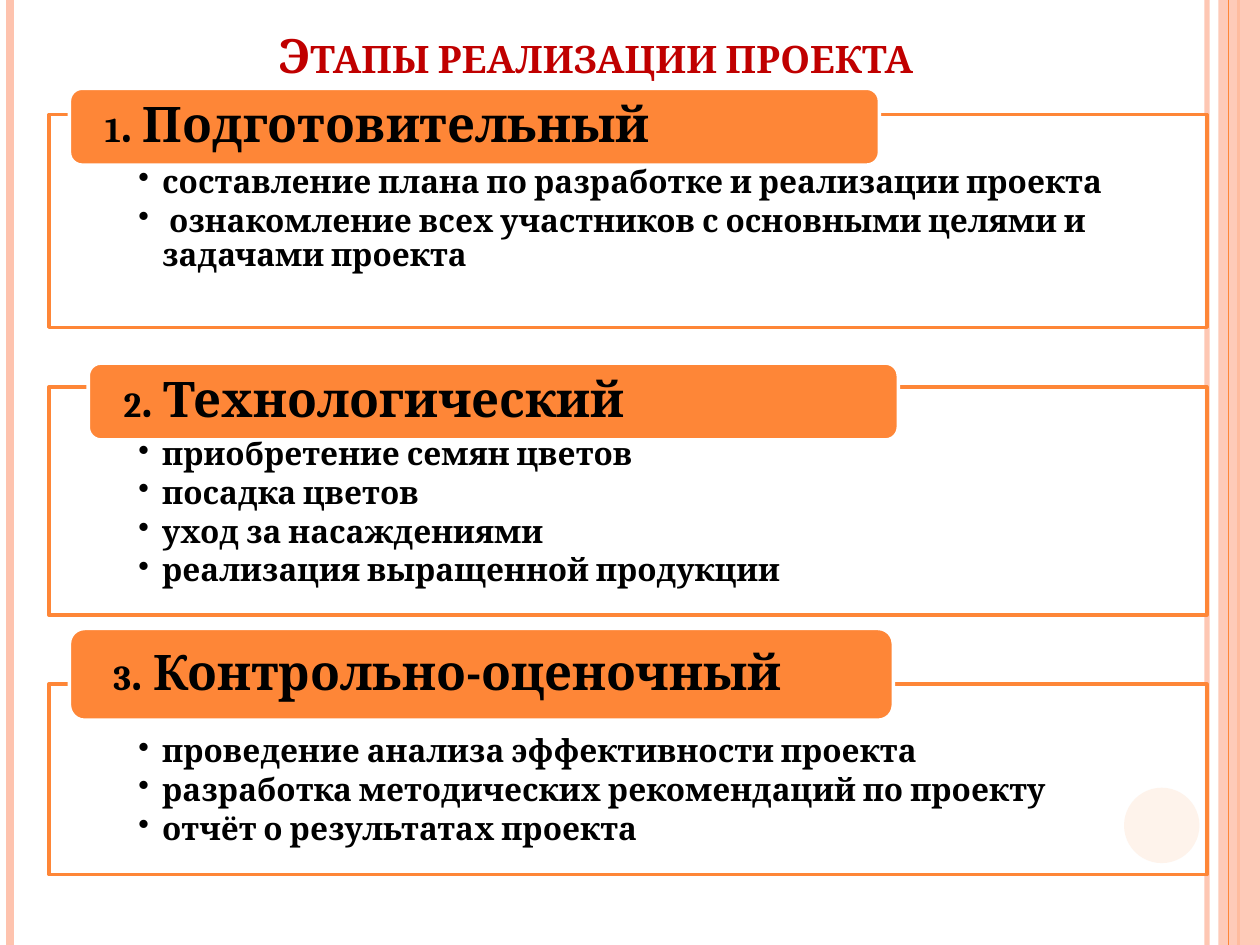
from dataclasses import dataclass
from lxml.etree import SubElement
from pptx import Presentation
from pptx.dml.color import RGBColor
from pptx.enum.shapes import MSO_CONNECTOR, MSO_SHAPE
from pptx.enum.text import MSO_ANCHOR, PP_ALIGN
from pptx.oxml.ns import qn
from pptx.util import Cm, Pt


@dataclass(frozen=True)
class Theme:
    font: str = "Cambria"
    main: str = "FE8637"
    pale: str = "FEC3AE"
    white: str = "FFFFFF"
    ink: str = "000000"
    red: str = "C00000"
    title: float = 27
    head: float = 28
    digit: float = 20
    body: float = 18
    edge: float = 2


@dataclass(frozen=True)
class Box:
    left: float
    top: float
    width: float
    height: float

    def place(self) -> tuple:
        return Cm(self.left), Cm(self.top), Cm(self.width), Cm(self.height)


@dataclass(frozen=True)
class Rail:
    x: float
    color: str
    width: float
    alpha: int = 100


@dataclass(frozen=True)
class Stage:
    mark: str
    name: str
    tab: Box
    top: float
    height: float
    items: tuple


THEME = Theme()
WIDE, HIGH = 25.4, 19.05
PANEL_X, PANEL_W = 0.99, 23.34
BACK = (
    Rail(24.33, THEME.pale, 3, 93),
    Rail(0.2, THEME.pale, 4.5),
    Rail(24.97, THEME.main, 1.5),
)
FRONT = Rail(24.77, THEME.main, 0.75)
STAGES = (
    Stage("1", "Подготовительный", Box(1.4, 1.78, 16.33, 1.55), 2.31, 4.29, (
        "составление плана по разработке и реализации проекта",
        " ознакомление всех участников с основными целями и задачами проекта",
    )),
    Stage("2", "Технологический", Box(1.78, 7.32, 16.33, 1.55), 7.8, 4.6, (
        "приобретение семян цветов",
        "посадка цветов",
        "уход за насаждениями",
        "реализация выращенной продукции",
    )),
    Stage(" 3", "Контрольно-оценочный", Box(1.4, 12.67, 16.61, 1.85), 13.79, 3.84, (
        "проведение анализа эффективности проекта",
        "разработка методических рекомендаций по проекту",
        "отчёт о результатах проекта",
    )),
)


def fade(fill, alpha: int) -> None:
    """Set the opacity, in percent, of a solid fill element."""
    if alpha < 100:
        SubElement(fill[0], qn("a:alpha")).set("val", str(alpha * 1000))


def add_rail(slide, rail: Rail) -> None:
    line = slide.shapes.add_connector(
        MSO_CONNECTOR.STRAIGHT, Cm(rail.x), 0, Cm(rail.x), Cm(HIGH))
    line.line.color.rgb = RGBColor.from_string(rail.color)
    line.line.width = Pt(rail.width)
    props = line._element.spPr
    fade(props.find(qn("a:ln")).find(qn("a:solidFill")), rail.alpha)
    SubElement(props, qn("a:effectLst"))


def add_form(slide, kind, box: Box, color: str, alpha: int = 100, edge: str = ""):
    form = slide.shapes.add_shape(kind, *box.place())
    form.shadow.inherit = False
    form.fill.solid()
    form.fill.fore_color.rgb = RGBColor.from_string(color)
    fade(form._element.spPr.find(qn("a:solidFill")), alpha)
    if edge:
        form.line.color.rgb = RGBColor.from_string(edge)
        form.line.width = Pt(THEME.edge)
    else:
        form.line.fill.background()
    return form


def set_frame(form, pads: tuple, anchor):
    frame = form.text_frame
    frame.word_wrap = True
    frame.vertical_anchor = anchor
    (frame.margin_left, frame.margin_top,
     frame.margin_right, frame.margin_bottom) = map(Cm, pads)
    return frame


def add_run(para, text: str, size: float, color: str = THEME.ink):
    run = para.add_run()
    run.text = text
    font = run.font
    font.name, font.size, font.bold = THEME.font, Pt(size), True
    font.color.rgb = RGBColor.from_string(color)
    return run


def set_bullet(para) -> None:
    props = para._p.get_or_add_pPr()
    props.set("marL", str(Cm(0.48)))
    props.set("indent", str(-Cm(0.48)))
    SubElement(props, qn("a:buChar")).set("char", "•")


def add_stage(slide, stage: Stage) -> None:
    # Panel with the list
    box = Box(PANEL_X, stage.top, PANEL_W, stage.height)
    panel = add_form(slide, MSO_SHAPE.RECTANGLE, box, THEME.white, 90, THEME.main)
    frame = set_frame(panel, (1.8, 1.04, 1.8, 0.36), MSO_ANCHOR.TOP)
    for i, item in enumerate(stage.items):
        para = frame.add_paragraph() if i else frame.paragraphs[0]
        para.alignment = PP_ALIGN.LEFT
        para.line_spacing = 0.9
        para.space_after = Pt(THEME.body * 0.15)
        set_bullet(para)
        add_run(para, item, THEME.body)

    # Tab with the heading
    tab = add_form(slide, MSO_SHAPE.ROUNDED_RECTANGLE, stage.tab,
                   THEME.main, edge=THEME.white)
    para = set_frame(tab, (0.64, 0, 0.64, 0), MSO_ANCHOR.MIDDLE).paragraphs[0]
    para.alignment = PP_ALIGN.LEFT
    para.line_spacing = 0.9
    add_run(para, stage.mark, THEME.digit)
    add_run(para, f". {stage.name}", THEME.head)


def add_title(slide, text: str) -> None:
    form = slide.shapes.add_textbox(*Box(1.4, 0.41, 20.75, 1.4).place())
    frame = set_frame(form, (0.73, 0.13, 0.25, 0.13), MSO_ANCHOR.BOTTOM)
    para = frame.paragraphs[0]
    para.alignment = PP_ALIGN.CENTER
    run = add_run(para, text, THEME.title, THEME.red)
    run._r.get_or_add_rPr().set("cap", "small")


def main() -> None:
    deck = Presentation()
    deck.slide_width, deck.slide_height = Cm(WIDE), Cm(HIGH)
    slide = deck.slides.add_slide(deck.slide_layouts[6])

    # Side decoration
    for rail in BACK:
        add_rail(slide, rail)
    add_form(slide, MSO_SHAPE.RECTANGLE, Box(24.56, 0, 0.84, HIGH), THEME.pale, 87)
    add_rail(slide, FRONT)
    add_form(slide, MSO_SHAPE.OVAL, Box(22.66, 15.88, 1.52, 1.52), THEME.main)

    # Title and stages
    add_title(slide, "Этапы реализации проекта")
    for stage in STAGES:
        add_stage(slide, stage)
    deck.save("out.pptx")


if __name__ == "__main__":
    main()
